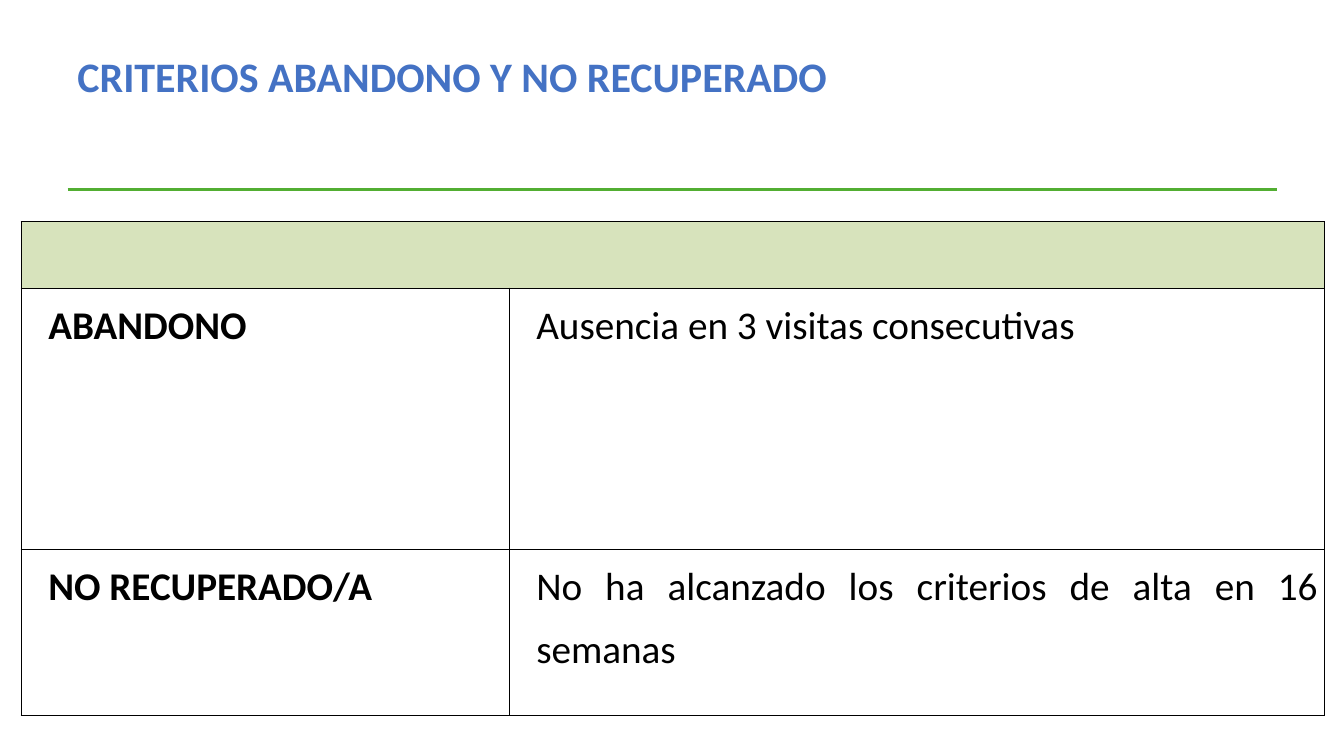
from pptx import Presentation
from pptx.dml.color import RGBColor
from pptx.enum.shapes import MSO_CONNECTOR as Link
from pptx.enum.text import MSO_ANCHOR as Anchor, PP_ALIGN as Align
from pptx.oxml import parse_xml
from pptx.oxml.ns import nsdecls
from pptx.util import Inches, Pt

BLUE = RGBColor(0x44, 0x72, 0xC4)
GREEN = RGBColor(0x52, 0xAE, 0x32)
PALE = RGBColor(0xD7, 0xE3, 0xBC)
WHITE = RGBColor(0xFF, 0xFF, 0xFF)
BLACK = RGBColor(0, 0, 0)

TITLE = "CRITERIOS ABANDONO Y NO RECUPERADO"
ROWS = [
    ("ABANDONO", "Ausencia en 3 visitas consecutivas"),
    ("NO RECUPERADO/A", "No ha alcanzado los criterios de alta en 16 semanas"),
]
WIDTHS = (4.84, 8.09)
HEIGHTS = (0.66, 2.59, 1.65)


def style(para, size, color, bold, space):
    para.line_spacing = space
    font = para.font
    font.name, font.size, font.bold = "Calibri", Pt(size), bold
    font.color.rgb = color


def add_title(slide, left, top, width, height):
    # Heading
    box = slide.shapes.add_textbox(
        Inches(left), Inches(top), Inches(width), Inches(height))
    frame = box.text_frame
    frame.word_wrap = True
    frame.vertical_anchor = Anchor.TOP
    frame.text = TITLE
    style(frame.paragraphs[0], 30, BLUE, True, 1.1)

    # Rule just below the heading
    y = Inches(top + height + 0.03)
    rule = slide.shapes.add_connector(
        Link.STRAIGHT, Inches(left), y, Inches(left + width), y)
    rule.line.color.rgb = GREEN
    rule.line.width = Pt(2)
    rule._element.spPr.append(parse_xml(f"<a:effectLst {nsdecls('a')}/>"))


def paint(cell, color):
    # Borders come before the fill in the cell properties
    props = cell._tc.get_or_add_tcPr()
    for side in "LRTB":
        props.append(parse_xml(
            f'<a:ln{side} {nsdecls("a")} w="{Pt(1)}"><a:solidFill>'
            f'<a:srgbClr val="{BLACK}"/></a:solidFill></a:ln{side}>'))
    cell.fill.solid()
    cell.fill.fore_color.rgb = color


def write(cell, text, bold):
    cell.margin_left = cell.margin_right = Inches(0.07)
    cell.margin_top = cell.margin_bottom = 0
    cell.text = text
    para = cell.text_frame.paragraphs[0]
    para._p.get_or_add_pPr().set("marL", str(Inches(0.2)))
    para.alignment = Align.JUSTIFY
    para.space_after = Pt(4)
    style(para, 28, BLACK, bold, 1.3)


def add_grid(slide, left, top):
    frame = slide.shapes.add_table(
        len(HEIGHTS), len(WIDTHS), Inches(left), Inches(top),
        Inches(sum(WIDTHS)), Inches(sum(HEIGHTS)))
    table = frame.table
    table.first_row = table.horz_banding = False
    for col, width in zip(table.columns, WIDTHS):
        col.width = Inches(width)
    for row, height in zip(table.rows, HEIGHTS):
        row.height = Inches(height)

    # Empty header band across both columns
    table.cell(0, 0).merge(table.cell(0, 1))
    for col in range(len(WIDTHS)):
        paint(table.cell(0, col), PALE)

    # Criteria
    for row, texts in enumerate(ROWS, 1):
        for col, text in enumerate(texts):
            cell = table.cell(row, col)
            paint(cell, WHITE)
            write(cell, text, col == 0)


def main():
    deck = Presentation()
    deck.slide_width, deck.slide_height = Inches(13.33), Inches(7.5)
    slide = deck.slides.add_slide(deck.slide_layouts[6])
    add_title(slide, 0.67, 0.4, 12, 1.45)
    add_grid(slide, 0.21, 2.2)
    deck.save("out.pptx")


if __name__ == "__main__":
    main()
